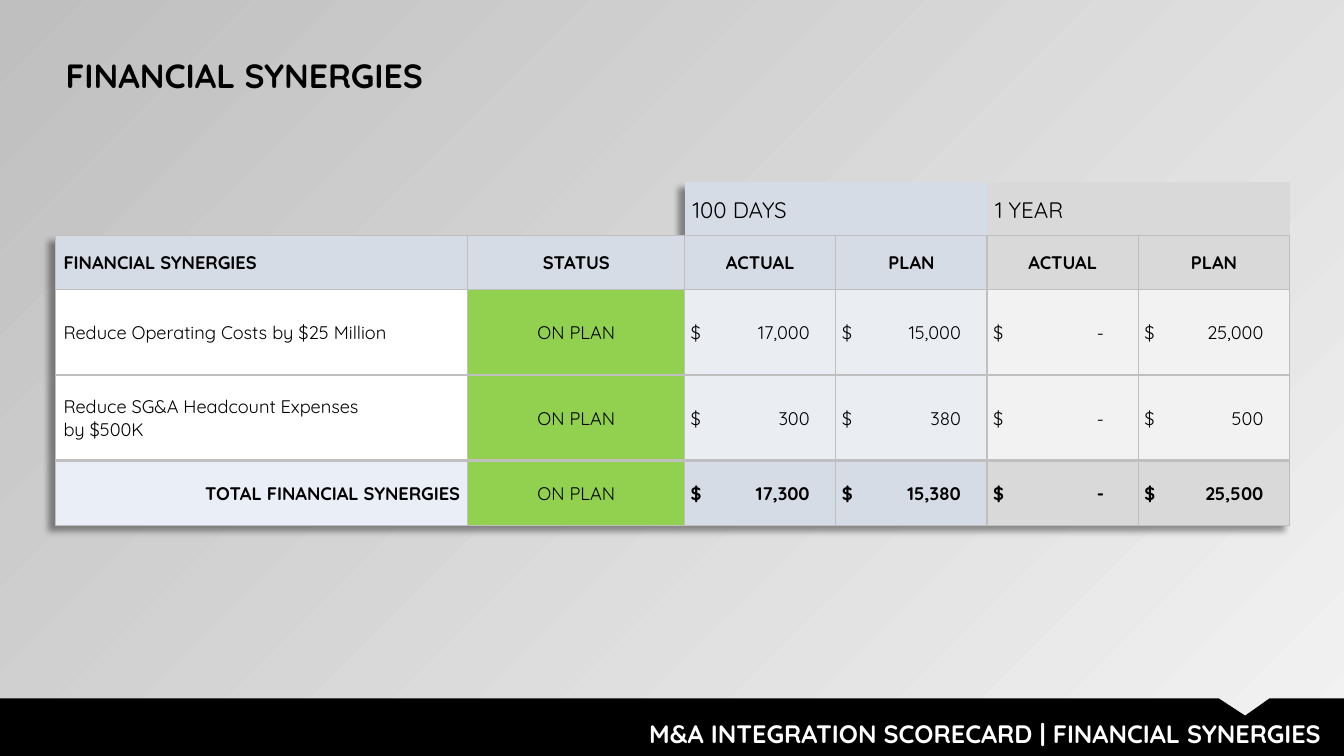
from lxml import etree
from pptx import Presentation
from pptx.dml.color import RGBColor
from pptx.enum.text import MSO_ANCHOR as ANCHOR, MSO_AUTO_SIZE as AUTO, PP_ALIGN as ALIGN
from pptx.oxml import parse_xml
from pptx.oxml.ns import nsdecls, qn
from pptx.util import Inches, Pt

FONT = "Quicksand"
BLACK, WHITE, GREEN, RULE = "000000", "FFFFFF", "92D050", "BFBFBF"
BLUE, PALE_BLUE, TOTAL_BLUE = "D6DCE5", "EAEEF3", "EAEFF7"
GREY, PALE_GREY = "D9D9D9", "F2F2F2"
NO_STYLE = "{2D5ABB26-0587-4C30-8999-92F81FD0307C}"

COLS = [4.09, 2.15] + [1.5] * 4
ROWS = [0.53, 0.53, 0.85, 0.85, 0.64]
PERIODS = ["100 DAYS", "1 YEAR"]
HEADERS = ["FINANCIAL SYNERGIES", "STATUS"] + ["ACTUAL", "PLAN"] * 2
SYNERGIES = [
    ["Reduce Operating Costs by $25 Million", "ON PLAN", "17,000", "15,000", "-", "25,000"],
    ["Reduce SG&A Headcount Expenses\nby $500K", "ON PLAN", "300", "380", "-", "500"],
    ["TOTAL FINANCIAL SYNERGIES", "ON PLAN", "17,300", "15,380", "-", "25,500"],
]


def rgb(value):
    return RGBColor.from_string(value)


def write(tf, text, size, color=BLACK, bold=False, align=ALIGN.LEFT):
    p = tf.paragraphs[0]
    p.alignment = align
    for i, line in enumerate(text.split("\n")):
        if i:
            p.add_line_break()
        r = p.add_run()
        r.text = line
        r.font.name, r.font.size, r.font.bold = FONT, Pt(size), bold
        r.font.color.rgb = rgb(color)
    return p


def paint_background(slide):
    fill = slide.background.fill
    fill.gradient()
    fill.gradient_angle = 135
    for stop, color in zip(fill.gradient_stops, (PALE_GREY, RULE)):
        stop.color.rgb = rgb(color)


def place_title(slide, x, y, w, h):
    title = slide.shapes.title
    title.left, title.top, title.width, title.height = map(Inches, (x, y, w, h))
    tf = title.text_frame
    tf.auto_size, tf.vertical_anchor = AUTO.NONE, ANCHOR.MIDDLE
    write(tf, "FINANCIAL SYNERGIES", 24, bold=True)


def add_footer(slide, x, y, w, h):
    # Black band with a notch in its upper edge
    notch = [(12.09, 0), (12.35, 0.17), (12.59, 0)]
    outline = notch + [(w, 0), (w, h), (0, h)]
    builder = slide.shapes.build_freeform(Inches(x), Inches(y))
    builder.add_line_segments([(Inches(x + dx), Inches(y + dy)) for dx, dy in outline])
    band = builder.convert_to_shape()
    band.shadow.inherit = False
    band.fill.solid()
    band.fill.fore_color.rgb = rgb(BLACK)
    band.line.fill.background()

    # Caption
    box = slide.shapes.add_textbox(Inches(x + 4.14), Inches(y + 0.15), Inches(9.06), Inches(0.4))
    tf = box.text_frame
    tf.word_wrap = True
    write(tf, "M&A INTEGRATION SCORECARD | FINANCIAL SYNERGIES", 18, WHITE, True, ALIGN.RIGHT)


def set_borders(cell, **widths):
    tc_pr = cell._tc.get_or_add_tcPr()
    lines = [parse_xml(
        f'<a:ln{side} {nsdecls("a")} w="{Pt(width)}"><a:solidFill>'
        f'<a:srgbClr val="{RULE}"/></a:solidFill></a:ln{side}>')
        for side, width in widths.items()]
    for i, line in enumerate(lines):
        tc_pr.insert(i, line)


def set_cell(cell, text, fill, size=13, bold=False, align=ALIGN.LEFT, left=0.01, right=0.01):
    cell.margin_left, cell.margin_right = Inches(left), Inches(right)
    cell.margin_top, cell.margin_bottom = Inches(0.01), 0
    cell.vertical_anchor = ANCHOR.MIDDLE
    cell.fill.solid()
    cell.fill.fore_color.rgb = rgb(fill)
    return write(cell.text_frame, text, size, BLACK, bold, align)


def set_amount(cell, amount, fill, bold):
    # Dollar sign at the left, figure on a right tab stop
    p = set_cell(cell, f"$\t{amount}", fill, bold=bold, left=0.06)
    stop = 1.1 if amount == "-" else 1.18
    tabs = etree.SubElement(p._p.get_or_add_pPr(), qn("a:tabLst"))
    etree.SubElement(tabs, qn("a:tab"), pos=str(Inches(stop)), algn="r")


def style_table(table):
    table.first_row = table.horz_banding = False
    tbl_pr = table._tbl.tblPr
    tbl_pr.find(qn("a:tableStyleId")).text = NO_STYLE
    tbl_pr.insert(0, parse_xml(
        f'<a:effectLst {nsdecls("a")}><a:outerShdw blurRad="{Pt(4)}" dist="{Pt(6)}" '
        'dir="8100000" algn="tr" rotWithShape="0"><a:srgbClr val="000000">'
        '<a:alpha val="40000"/></a:srgbClr></a:outerShdw></a:effectLst>'))


def add_scorecard(slide, x, y):
    frame = slide.shapes.add_table(len(ROWS), len(COLS), Inches(x), Inches(y),
                                   Inches(sum(COLS)), Inches(sum(ROWS)))
    table = frame.table
    style_table(table)
    for column, width in zip(table.columns, COLS):
        column.width = Inches(width)
    for row, height in zip(table.rows, ROWS):
        row.height = Inches(height)

    # Period row
    for c in range(len(COLS)):
        table.cell(0, c).fill.background()
        set_borders(table.cell(0, c), B=1)
    for i, (period, fill) in enumerate(zip(PERIODS, (BLUE, GREY))):
        cell = table.cell(0, 2 + 2 * i)
        cell.merge(table.cell(0, 3 + 2 * i))
        set_cell(cell, period, fill, size=16, left=0.08)

    # Header row
    for c, header in enumerate(HEADERS):
        cell = table.cell(1, c)
        align, left = (ALIGN.CENTER, 0.01) if c else (ALIGN.LEFT, 0.08)
        set_cell(cell, header, BLUE if c < 4 else GREY, bold=True, align=align, left=left)
        set_borders(cell, L=1, R=1, T=1, B=1)

    # Synergies and their total
    last = len(ROWS) - 1
    for r, (name, status, *amounts) in enumerate(SYNERGIES, start=2):
        total = r == last
        if total:
            set_cell(table.cell(r, 0), name, TOTAL_BLUE, bold=True, align=ALIGN.RIGHT, right=0.08)
        else:
            set_cell(table.cell(r, 0), name, WHITE, left=0.08)
        set_cell(table.cell(r, 1), status, GREEN, align=ALIGN.CENTER)
        fills = (BLUE, GREY) if total else (PALE_BLUE, PALE_GREY)
        for i, amount in enumerate(amounts):
            set_amount(table.cell(r, 2 + i), amount, fills[i // 2], total)
        for c in range(len(COLS)):
            set_borders(table.cell(r, c), L=1, R=1, T=2.25 if total else 1,
                        B=2.25 if r == last - 1 else 1)


def main():
    prs = Presentation()
    prs.slide_width, prs.slide_height = Inches(13.33), Inches(7.5)
    slide = prs.slides.add_slide(prs.slide_layouts[5])
    paint_background(slide)
    add_footer(slide, 0, 6.93, 13.33, 0.57)
    add_scorecard(slide, 0.55, 1.81)
    place_title(slide, 0.55, 0.49, 4.29, 0.5)
    prs.save("out.pptx")


if __name__ == "__main__":
    main()
